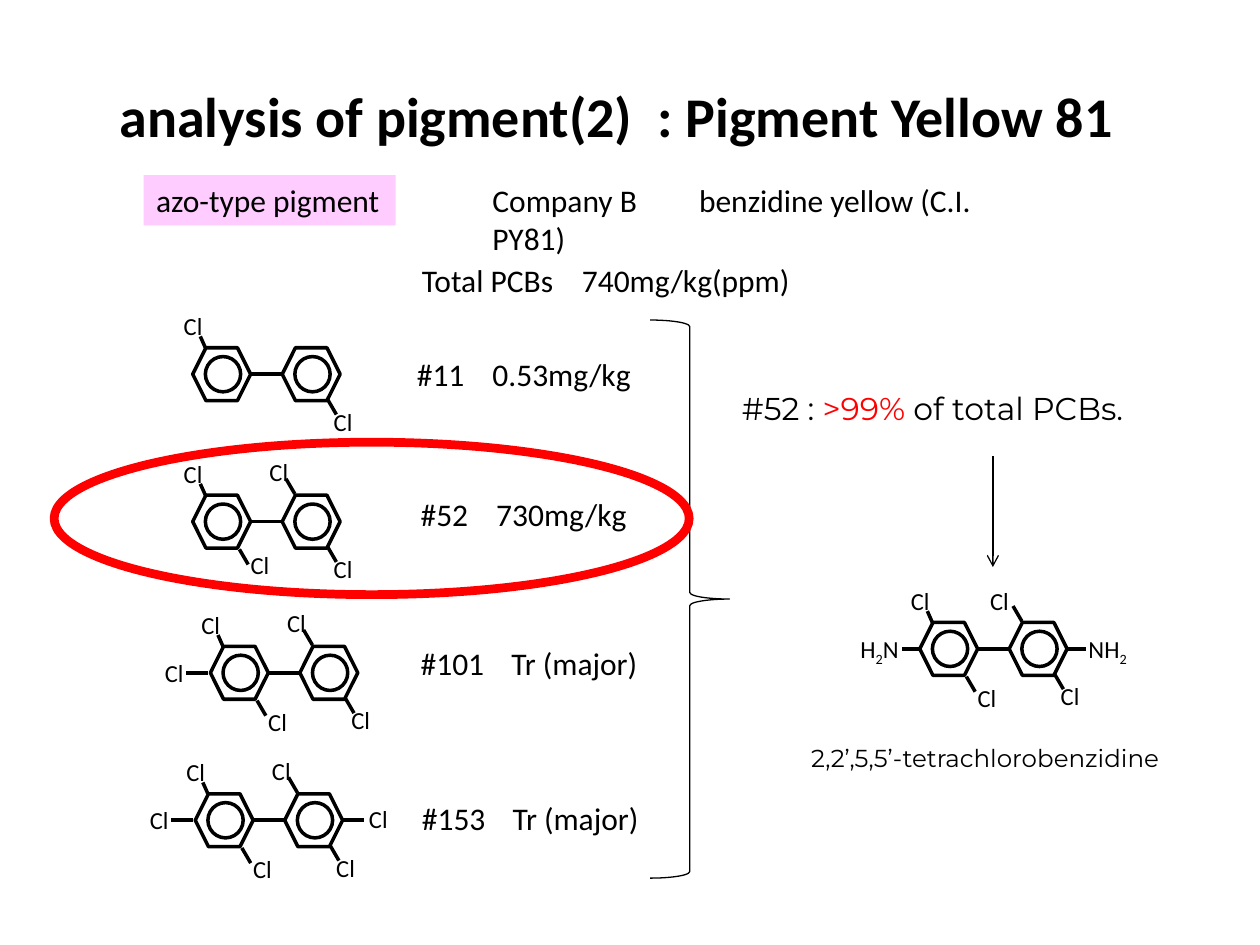
from lxml.etree import SubElement
from pptx import Presentation
from pptx.dml.color import RGBColor
from pptx.enum.shapes import MSO_CONNECTOR, MSO_SHAPE
from pptx.enum.text import MSO_AUTO_SIZE
from pptx.oxml.ns import qn
from pptx.util import Inches, Pt

BLACK = RGBColor(0x00, 0x00, 0x00)
RED = RGBColor(0xFF, 0x00, 0x00)
PINK = RGBColor(0xFF, 0xCC, 0xFF)
BODY_FONT = "Calibri"
NOTE_FONT = "Montserrat"

RING_WIDTH, RING_HEIGHT, RING_STEP = 0.46, 0.42, 0.71
CIRCLE_SIZE = 0.28
AXIS = RING_HEIGHT / 2
CHLORINE_WIDTH, AMINE_WIDTH = 0.35, 0.52

# Site: bond start, bond end, label corner, all measured from the left ring's corner
SITES = {
    "upper left": ((0.06, -0.09), (0.1, 0), (-0.17, -0.34)),
    "lower right": ((1.14, 0.53), (1.07, 0.41), (1.02, 0.42)),
    "upper right": ((0.81, -0.01), (0.74, -0.13), (0.51, -0.35)),
    "lower left": ((0.44, 0.55), (0.37, 0.43), (0.36, 0.43)),
    "far left": ((-0.02, AXIS), (-0.19, AXIS), (-0.46, 0.04)),
    "far right": ((1.34, AXIS), (1.17, AXIS), (1.28, 0.03)),
    "amine left": ((0, AXIS), (-0.14, AXIS), (-0.57, 0.04)),
    "amine right": ((1.32, AXIS), (1.18, AXIS), (1.24, 0.04)),
}
AMINES = {"amine left": ("H", "2", "N"), "amine right": ("NH", "2")}
INNER_SITES = ["upper left", "lower right", "upper right", "lower left"]

# Ring corner, substituted sites, labels that sit off their usual place
MOLECULES = [
    (1.53, 2.76, ["upper left", "lower right"], {}),
    (1.53, 3.93, INNER_SITES, {"lower left": (0.36, 0.39)}),
    (1.67, 5.13, INNER_SITES + ["far left"], {}),
    (1.55, 6.3, INNER_SITES + ["far left", "far right"], {}),
    (7.3, 4.94, INNER_SITES + list(AMINES), {"upper right": (0.46, -0.34)}),
]

# Left, top, width, text, tab stop
READINGS = [
    (3.25, 2.02, 3.15, "Total PCBs\t740mg/kg(ppm)", 1.27),
    (3.21, 2.77, 1.92, "#11\t0.53mg/kg", 0.6),
    (3.24, 3.88, 1.86, "#52\t730mg/kg", 0.6),
    (3.24, 5.06, 1.95, "#101\tTr (major)", 0.72),
    (3.25, 6.29, 1.95, "#153\tTr (major)", 0.72),
]


def style_font(font, size, name=BODY_FONT, color=BLACK, bold=False):
    font.size = Pt(size)
    font.name = name
    font.color.rgb = color
    font.bold = bold


def add_text(shapes, left, top, width, height, parts, size=18, font=BODY_FONT,
             bold=False, wrap=False):
    """Add one paragraph with a run for each part, and return the box."""
    box = shapes.add_textbox(Inches(left), Inches(top), Inches(width), Inches(height))
    box.text_frame.word_wrap = wrap
    box.text_frame.auto_size = MSO_AUTO_SIZE.SHAPE_TO_FIT_TEXT
    for part in parts:
        run = box.text_frame.paragraphs[0].add_run()
        run.text = part
        style_font(run.font, size, font, bold=bold)
    return box


def set_tab_stop(box, position):
    properties = box.text_frame.paragraphs[0]._p.get_or_add_pPr()
    stops = SubElement(properties, qn("a:tabLst"))
    SubElement(stops, qn("a:tab"), pos=str(Inches(position)), algn="l")


def add_outline(shapes, preset, left, top, width, height, color=BLACK, weight=2):
    shape = shapes.add_shape(preset, Inches(left), Inches(top), Inches(width), Inches(height))
    shape.shadow.inherit = False
    shape.fill.background()
    shape.line.color.rgb = color
    shape.line.width = Pt(weight)


def add_line(shapes, start, end, weight=2, arrow=False):
    line = shapes.add_connector(MSO_CONNECTOR.STRAIGHT, *map(Inches, start + end))
    line.line.color.rgb = BLACK
    line.line.width = Pt(weight)
    if arrow:
        SubElement(line.line._get_or_add_ln(), qn("a:tailEnd"), type="arrow")
    SubElement(line._element.spPr, qn("a:effectLst"))


def add_substituent(shapes, left, top, site, label_place=None):
    start, end, usual_place = SITES[site]
    add_line(shapes, (left + start[0], top + start[1]), (left + end[0], top + end[1]))
    label_x, label_y = label_place or usual_place
    width = AMINE_WIDTH if site in AMINES else CHLORINE_WIDTH
    label = add_text(shapes, left + label_x, top + label_y, width, 0.34,
                     AMINES.get(site, ("Cl",)), size=14)
    for run in label.text_frame.paragraphs[0].runs:
        if run.text.isdigit():
            run.font._element.set("baseline", "-25000")


def add_molecule(slide, left, top, sites, moved_labels):
    """Draw a biphenyl as one group, with its substituents."""
    shapes = slide.shapes.add_group_shape().shapes
    for ring_left in (left, left + RING_STEP):
        add_outline(shapes, MSO_SHAPE.HEXAGON, ring_left, top, RING_WIDTH, RING_HEIGHT)
        add_outline(shapes, MSO_SHAPE.OVAL, ring_left + 0.1, top + 0.07,
                    CIRCLE_SIZE, CIRCLE_SIZE)
    add_line(shapes, (left + RING_WIDTH, top + AXIS), (left + RING_STEP, top + AXIS))
    for site in sites:
        add_substituent(shapes, left, top, site, moved_labels.get(site))


def add_headings(shapes):
    add_text(shapes, 0.85, 0.6, 8.17, 0.64,
             ["analysis of pigment(2)  : Pigment Yellow 81"], size=32, bold=True)
    pigment_type = add_text(shapes, 1.14, 1.39, 2, 0.4, ["azo-type pigment"])
    pigment_type.fill.solid()
    pigment_type.fill.fore_color.rgb = PINK
    sample = add_text(shapes, 3.81, 1.39, 4.47, 0.4,
                      ["Company B\tbenzidine yellow (C.I. PY81)"], wrap=True)
    set_tab_stop(sample, 1.64)


def add_conclusion(shapes):
    add_outline(shapes, MSO_SHAPE.RIGHT_BRACE, 5.16, 2.54, 0.63, 4.43, weight=0.75)
    share = add_text(shapes, 5.79, 3.04, 3.85, 0.4,
                     ["#52 : ", ">99% ", "of total PCBs."], font=NOTE_FONT, wrap=True)
    share.text_frame.paragraphs[0].runs[1].font.color.rgb = RED
    add_line(shapes, (7.88, 3.62), (7.88, 4.5), weight=0.75, arrow=True)
    add_text(shapes, 6.34, 5.85, 3.33, 0.34,
             ["2,2’,5,5’-tetrachlorobenzidine"], size=14, font=NOTE_FONT)


def main():
    presentation = Presentation()
    presentation.slide_width = Inches(10)
    presentation.slide_height = Inches(7.5)
    slide = presentation.slides.add_slide(presentation.slide_layouts[6])

    add_headings(slide.shapes)
    for left, top, width, text, tab_stop in READINGS:
        set_tab_stop(add_text(slide.shapes, left, top, width, 0.4, [text]), tab_stop)
    add_conclusion(slide.shapes)
    for molecule in MOLECULES:
        add_molecule(slide, *molecule)
    add_outline(slide.shapes, MSO_SHAPE.OVAL, 0.43, 3.51, 5.04, 1.21, color=RED, weight=5)

    presentation.save("out.pptx")


if __name__ == "__main__":
    main()
